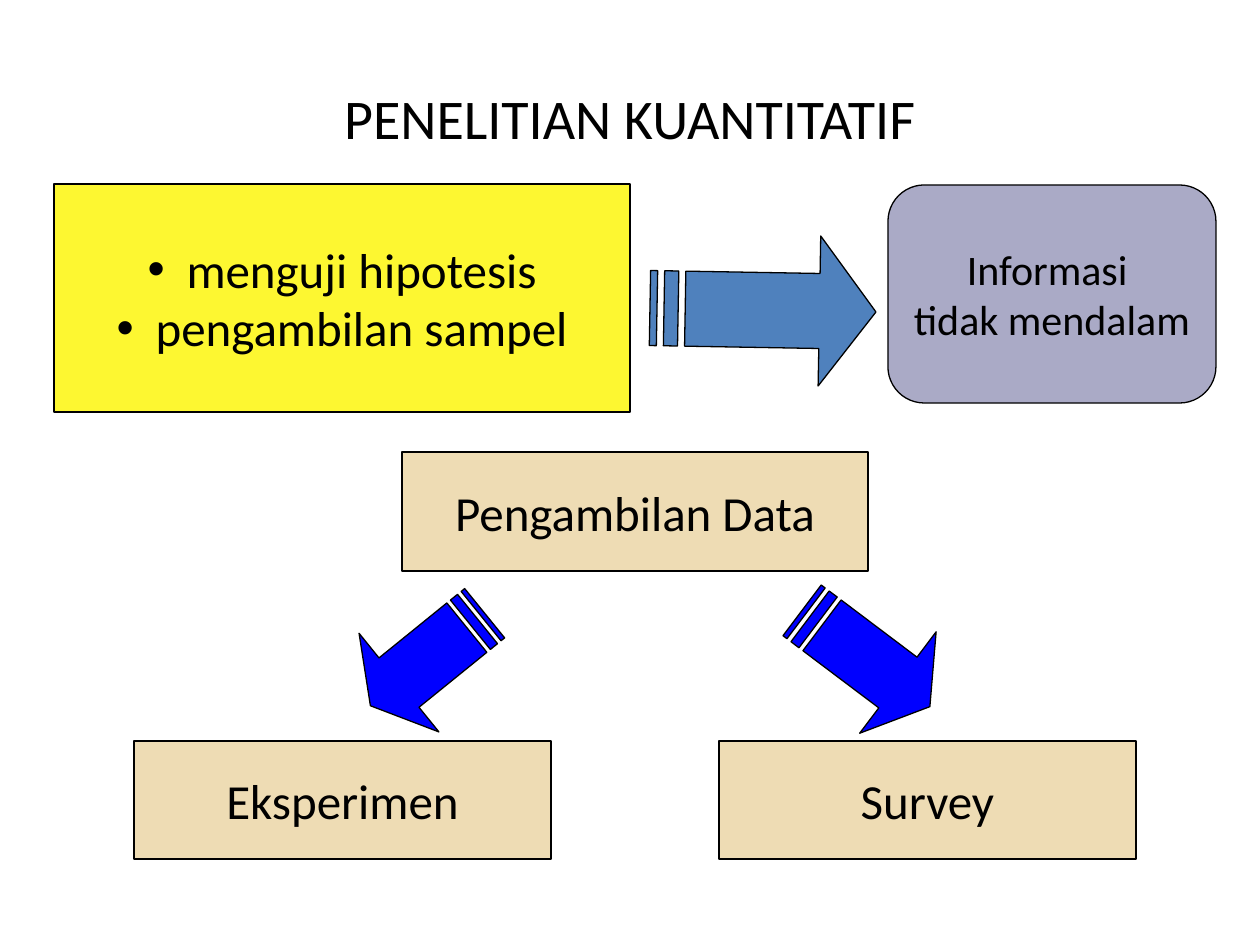
from lxml import etree
from pptx import Presentation
from pptx.dml.color import RGBColor
from pptx.enum.shapes import MSO_SHAPE
from pptx.enum.text import MSO_ANCHOR, PP_ALIGN
from pptx.oxml.ns import qn
from pptx.util import Pt

PX = 914400 / 126
RECT = MSO_SHAPE.RECTANGLE
ROUNDED = MSO_SHAPE.ROUNDED_RECTANGLE
MIDDLE = MSO_ANCHOR.MIDDLE
CENTER = PP_ALIGN.CENTER
BLACK, YELLOW, LILAC, SAND = "000000", "FDF731", "AAAAC6", "EEDCB4"
STEEL, BLUE = "4F81BD", "0000FF"
BULLET_INDENT = 39


def px(length):
    return round(length * PX)


def paint(color_format, color):
    color_format.rgb = RGBColor.from_string(color)


prs = Presentation()
prs.slide_width, prs.slide_height = px(1260), px(945)
slide = prs.slides.add_slide(prs.slide_layouts[5])

title = slide.shapes.title
title.left, title.top, title.width, title.height = map(px, (63, 38, 1134, 158))
title.text = "PENELITIAN KUANTITATIF"

boxes = [
    (RECT, (54, 184, 576, 228), YELLOW, 28, True, ["menguji hipotesis", "pengambilan sampel"]),
    (ROUNDED, (888, 185, 328, 218), LILAC, 24, False, ["Informasi ", "tidak mendalam"]),
    (RECT, (402, 452, 466, 119), SAND, 28, False, ["Pengambilan Data"]),
    (RECT, (719, 741, 417, 118), SAND, 28, False, ["Survey"]),
    (RECT, (134, 741, 417, 118), SAND, 28, False, ["Eksperimen"]),
]
texts = [(title, 32, False)]
outlined = []
for kind, place, fill, size, bulleted, lines in boxes:
    box = slide.shapes.add_shape(kind, *map(px, place))
    box.text_frame.text = "\n".join(lines)
    box.text_frame.word_wrap = False
    texts.append((box, size, bulleted))
    outlined.append((box, fill))

for holder, size, bulleted in texts:
    holder.text_frame.vertical_anchor = MIDDLE
    for paragraph in holder.text_frame.paragraphs:
        paragraph.alignment = CENTER
        if bulleted:
            properties = paragraph._p.get_or_add_pPr()
            properties.set("marL", str(px(BULLET_INDENT)))
            properties.set("indent", str(-px(BULLET_INDENT)))
            etree.SubElement(properties, qn("a:buFont")).set("typeface", "Arial")
            etree.SubElement(properties, qn("a:buChar")).set("char", "•")
        for name, value in {"name": "Calibri", "size": Pt(size)}.items():
            setattr(paragraph.font, name, value)
        paint(paragraph.font.color, BLACK)

GRID_COLUMNS, GRID_ROWS = 32, 4
arrow_head = [(24, 0), (24, 1), (5, 1), (5, 3), (24, 3), (24, 4), (32, 2)]
stripes = [[(a, 1), (a, 3), (b, 3), (b, 1)] for a, b in [(2, 4), (0, 1)]]
arrows = [
    ((650, 235, 226, 150), 1, STEEL),
    ((786, 595, 160, 127), 37, BLUE),
    ((354, 596, 147, 127), 141, BLUE),
]
for (left, top, width, height), angle, fill in arrows:
    scale = (width * PX / GRID_COLUMNS, height * PX / GRID_ROWS)
    outline = slide.shapes.build_freeform(*arrow_head[0], scale=scale)
    outline.add_line_segments(arrow_head[1:])
    for stripe in stripes:
        outline.move_to(*stripe[0])
        outline.add_line_segments(stripe[1:])
    arrow = outline.convert_to_shape(px(left), px(top))
    arrow.rotation = angle
    outlined.append((arrow, fill))

for shape, fill in outlined:
    shape.shadow.inherit = False
    shape.fill.solid()
    paint(shape.fill.fore_color, fill)
    paint(shape.line.color, BLACK)
    shape.line.width = Pt(0.75)

prs.save("out.pptx")
